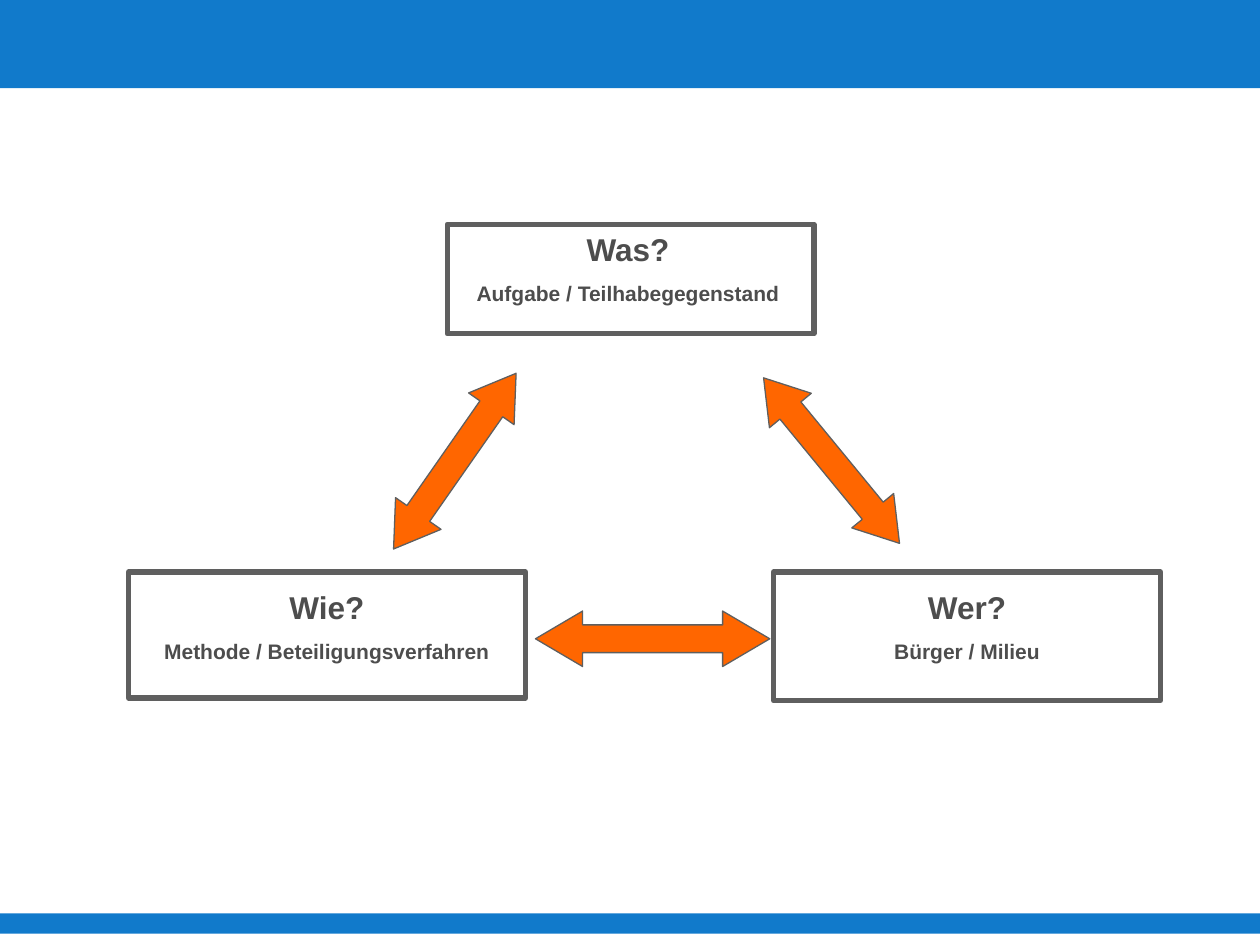
"""Build a slide on the triangle of task, method and people in public participation."""
from pptx import Presentation
from pptx.dml.color import RGBColor
from pptx.enum.shapes import MSO_SHAPE
from pptx.enum.text import MSO_ANCHOR, PP_ALIGN
from pptx.util import Inches, Pt

BLUE = RGBColor(0x11, 0x7A, 0xCB)
WHITE = RGBColor(0xFF, 0xFF, 0xFF)
GREY = RGBColor(0x5F, 0x5F, 0x5F)
DARK = RGBColor(0x4D, 0x4D, 0x4D)
ORANGE = RGBColor(0xFF, 0x66, 0x00)

deck = Presentation()
deck.slide_width, deck.slide_height = Inches(10), Inches(7.5)
slide = deck.slides.add_slide(deck.slide_layouts[6])
COL, ROW = deck.slide_width / 10, deck.slide_height / 7.5


def draw(place, kind=MSO_SHAPE.RECTANGLE, fill=None, line=None, width=1):
    left, top, wide, high = place
    shape = slide.shapes.add_shape(
        kind, int(left * COL), int(top * ROW), int(wide * COL), int(high * ROW))
    shape.shadow.inherit = False
    if fill is None:
        shape.fill.background()
    else:
        shape.fill.solid()
        shape.fill.fore_color.rgb = fill
    if line is None:
        shape.line.fill.background()
    else:
        shape.line.color.rgb = line
        shape.line.width = Pt(width)
    return shape


def write(para, text, size=12, color=DARK, bold=True, before=0):
    para.text = text
    para.alignment = PP_ALIGN.CENTER
    para.space_before = Pt(before)
    font = para.font
    font.name, font.size, font.bold = "Arial", Pt(size), bold
    font.color.rgb = color


for band in [(0, 7.25, 10, 0.16), (0, 0, 10, 0.7)]:
    draw(band, fill=BLUE)

labels = [
    ("Was?", "Aufgabe / Teilhabegegenstand", (3.55, 1.78, 2.87, 0.7)),
    ("Wie?", "Methode / Beteiligungsverfahren", (1.06, 4.62, 3.07, 1)),
    ("Wer?", "Bürger / Milieu", (6.18, 4.62, 2.99, 1)),
]
for head, note, place in labels:
    frame = draw(place, fill=WHITE).text_frame
    frame.word_wrap = True
    frame.vertical_anchor = MSO_ANCHOR.TOP
    write(frame.paragraphs[0], head, size=18)
    write(frame.add_paragraph(), note, before=7)

for place in [(3.55, 1.78, 2.91, 0.87), (1.02, 4.54, 3.15, 1), (6.14, 4.54, 3.07, 1.02)]:
    draw(place, line=GREY, width=3)

arrows = [
    ((2.76, 3.44, 1.7, 0.44), 304.9, 0.78),
    ((5.75, 3.44, 1.7, 0.43), 230.6, 0.78),
    ((4.25, 4.85, 1.86, 0.44), 0, 0.85),
]
for place, turn, tip in arrows:
    arrow = draw(place, MSO_SHAPE.LEFT_RIGHT_ARROW, ORANGE, GREY, 0.75)
    arrow.rotation = turn
    arrow.adjustments[0] = 0.5
    arrow.adjustments[1] = tip

deck.save("out.pptx")
